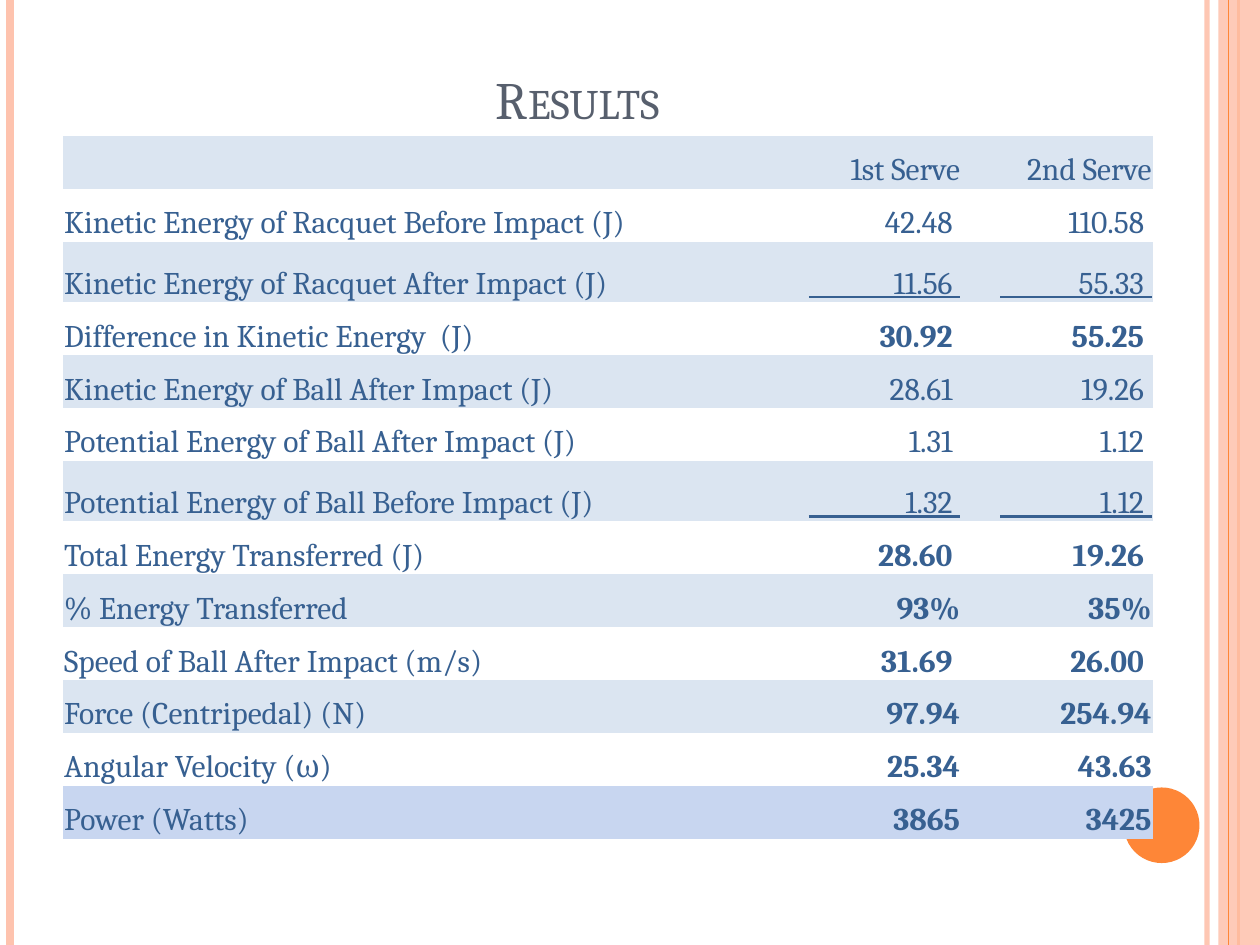
from pptx import Presentation
from pptx.dml.color import RGBColor as Rgb
from pptx.enum.shapes import MSO_CONNECTOR as Conn, MSO_SHAPE as Kind
from pptx.enum.text import MSO_ANCHOR as Anchor, PP_ALIGN as Align
from pptx.oxml.ns import qn
from pptx.util import Inches, Pt
from lxml.etree import SubElement as Sub

HUES = {"peach": "FEC3AE", "orange": "FE8637", "slate": "575F6D",
        "navy": "376091", "band": "DBE5F1", "last": "C8D6F0"}
PLAIN = "{2D5ABB26-0587-4C30-8999-92F81FD0307C}"
ROWS = [
    ("", "1st Serve", "2nd Serve"),
    ("Kinetic Energy of Racquet Before Impact (J)", "42.48", "110.58"),
    ("Kinetic Energy of Racquet After Impact (J)", "11.56", "55.33"),
    ("Difference in Kinetic Energy  (J)", "30.92", "55.25"),
    ("Kinetic Energy of Ball After Impact (J)", "28.61", "19.26"),
    ("Potential Energy of Ball After Impact (J)", "1.31", "1.12"),
    ("Potential Energy of Ball Before Impact (J)", "1.32", "1.12"),
    ("Total Energy Transferred (J)", "28.60", "19.26"),
    ("% Energy Transferred", "93%", "35%"),
    ("Speed of Ball After Impact (m/s)", "31.69", "26.00"),
    ("Force (Centripedal) (N)", "97.94", "254.94"),
    ("Angular Velocity (ω)", "25.34", "43.63"),
    ("Power (Watts)", "3865", "3425"),
]
WIDTHS = (5.47, 1.66, 1.52)
SUMS = (2, 6)
BOLD = (3, 7, 8, 9, 10, 11, 12)
INSET = (1, 2, 3, 4, 5, 6, 7, 9)
LEFT, TOP = 0.5, 1.08


def write(frame, text, size=18, hue="navy", align=Align.LEFT, bold=False, caps=False):
    par = frame.paragraphs[0]
    par.alignment = align
    run = par.add_run()
    run.text = text
    font = run.font
    font.name, font.size, font.bold = "Cambria", Pt(size), bold
    font.color.rgb = Rgb.from_string(HUES[hue])
    if caps:
        run._r.get_or_add_rPr().set("cap", "small")


class Deck:
    def __init__(self):
        self.show = Presentation()
        self.show.slide_width, self.show.slide_height = Inches(10), Inches(7.5)
        self.slide = self.show.slides.add_slide(self.show.slide_layouts[6])
        self.shapes = self.slide.shapes

    def paint(self, fill, hue, alpha=100):
        fill.solid()
        fill.fore_color.rgb = Rgb.from_string(HUES[hue])
        if alpha < 100:
            node = fill._xPr.find(".//" + qn("a:srgbClr"))
            Sub(node, qn("a:alpha")).set("val", str(alpha * 1000))

    def line(self, x, y, end, low, hue, width, alpha=100):
        bar = self.shapes.add_connector(
            Conn.STRAIGHT, Inches(x), Inches(y), Inches(end), Inches(low))
        bar.line.width = Pt(width)
        self.paint(bar.line.fill, hue, alpha)
        Sub(bar._element.spPr, qn("a:effectLst"))

    def shape(self, kind, x, y, w, h, hue, alpha=100):
        form = self.shapes.add_shape(kind, Inches(x), Inches(y), Inches(w), Inches(h))
        form.shadow.inherit = False
        form.line.fill.background()
        self.paint(form.fill, hue, alpha)

    def title(self, text, x, y, w, h):
        frame = self.shapes.add_textbox(
            Inches(x), Inches(y), Inches(w), Inches(h)).text_frame
        frame.word_wrap = True
        frame.vertical_anchor = Anchor.BOTTOM
        write(frame, text, size=30, hue="slate", align=Align.CENTER, caps=True)

    def cell(self, cell, text, hue, right, **style):
        cell.vertical_anchor = Anchor.BOTTOM
        cell.margin_left = cell.margin_top = Inches(0.01)
        cell.margin_right, cell.margin_bottom = Inches(right), 0
        if hue:
            self.paint(cell.fill, hue)
        else:
            cell.fill.background()
        if text:
            write(cell.text_frame, text, **style)

    def table(self, rows, tall):
        grid = self.shapes.add_table(
            len(rows), len(WIDTHS), Inches(LEFT), Inches(TOP),
            Inches(sum(WIDTHS)), Inches(sum(tall))).table
        grid.first_row = grid.horz_banding = False
        grid._tbl.tblPr.find(qn("a:tableStyleId")).text = PLAIN
        for col, wide in zip(grid.columns, WIDTHS):
            col.width = Inches(wide)
        for r, row in enumerate(rows):
            grid.rows[r].height = Inches(tall[r])
            hue = "last" if r == len(rows) - 1 else None if r % 2 else "band"
            for c, text in enumerate(row):
                self.cell(grid.cell(r, c), text, hue,
                          0.07 if c and r in INSET else 0.01,
                          align=Align.RIGHT if c else Align.LEFT,
                          bold=c > 0 and r in BOLD)


def main():
    deck = Deck()
    deck.line(9.58, 0, 9.58, 7.5, "peach", 3, 93)
    deck.line(0.08, 0, 0.08, 7.5, "peach", 4.5)
    deck.line(9.83, 0, 9.83, 7.5, "orange", 1.5)
    deck.shape(Kind.RECTANGLE, 9.67, 0, 0.33, 7.5, "peach", 87)
    deck.line(9.75, 0, 9.75, 7.5, "orange", 0.75)
    deck.shape(Kind.OVAL, 8.92, 6.25, 0.6, 0.6, "orange")
    deck.title("Results", 0.5, 0.3, 8.17, 0.78)
    tall = [0.48 if r in SUMS else 0.42 for r in range(len(ROWS))]
    deck.table(ROWS, tall)
    for r in SUMS:
        y = TOP + sum(tall[:r + 1]) - 0.04
        for c in (1, 2):
            end = LEFT + sum(WIDTHS[:c + 1]) - 0.01
            deck.line(end - 1.2, y, end, y, "navy", 1.25)
    deck.show.save("out.pptx")


if __name__ == "__main__":
    main()
